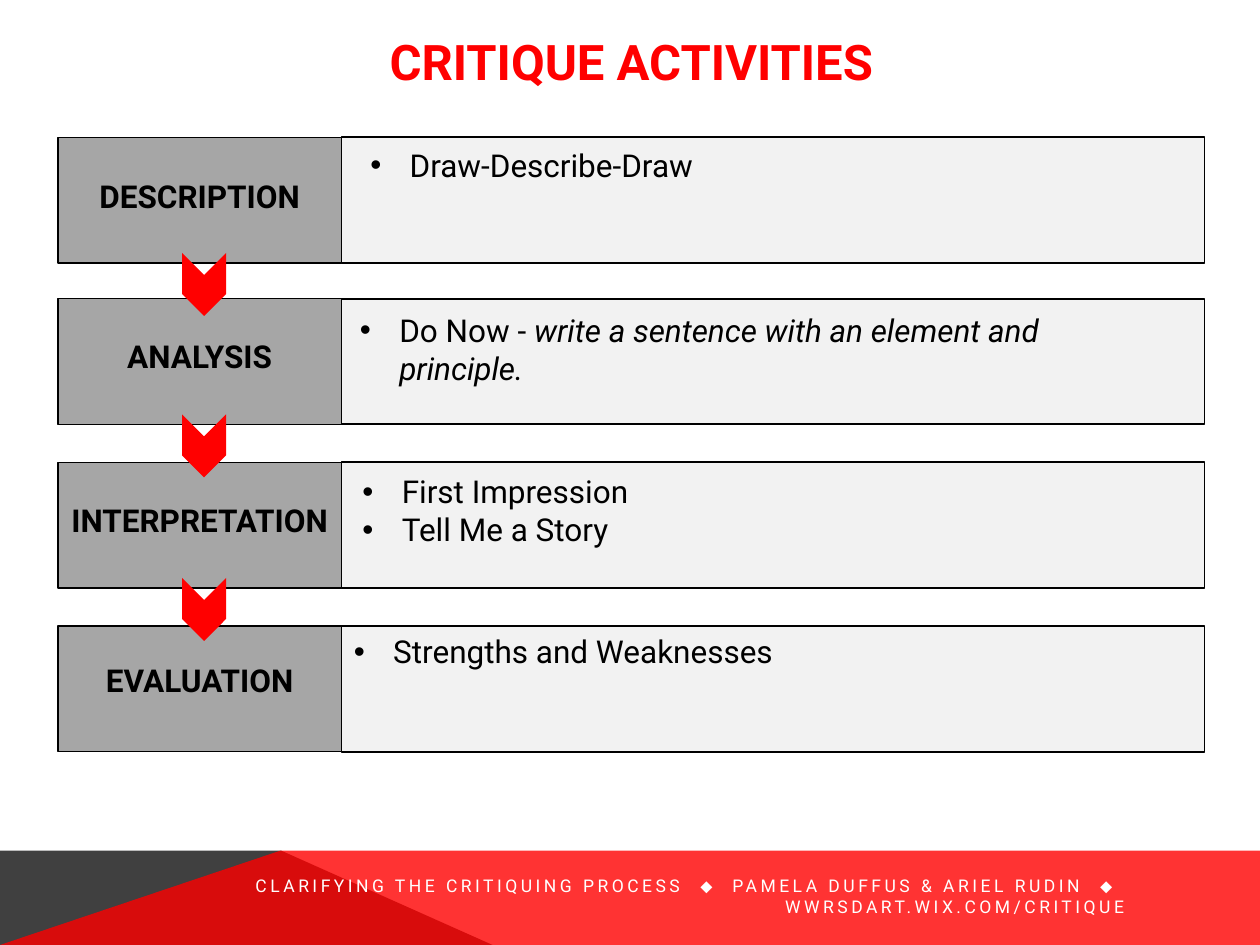
from dataclasses import dataclass
from typing import Tuple

from lxml.etree import SubElement
from pptx import Presentation
from pptx.dml.color import RGBColor
from pptx.enum.shapes import MSO_SHAPE as SHAPE
from pptx.enum.text import MSO_ANCHOR as ANCHOR, MSO_AUTO_SIZE as AUTO, PP_ALIGN as ALIGN
from pptx.oxml.ns import qn
from pptx.util import Pt

RED = RGBColor(0xFF, 0x00, 0x00)
BLACK = RGBColor(0x00, 0x00, 0x00)
WHITE = RGBColor(0xFF, 0xFF, 0xFF)
CHARCOAL = RGBColor(0x40, 0x40, 0x40)
GREY = RGBColor(0xA6, 0xA6, 0xA6)
PALE = RGBColor(0xF2, 0xF2, 0xF2)

PAGE_W, PAGE_H = 720, 540
FOOTER_TOP, FOOTER_PEAK = 486, 160.5
LABEL_X, LABEL_W = 33.1, 162
PANEL_X, PANEL_W = 195.1, 493.2
ROW_H = 71.8
CHEVRON_W, CHEVRON_H = 36, 25.2
INDENT = 22.5


@dataclass
class Run:
    text: str
    italic: bool = False
    font: str = "Roboto"
    spacing: float = 0


@dataclass
class Step:
    label: str
    top: float
    label_top: float
    box: Tuple[float, float, float, float]  # left, top, width, height
    bullets: Tuple[Tuple[Run, ...], ...]


STEPS = [
    Step("DESCRIPTION", 78.5, 97.7, (204.5, 79.9, 342, 29),
         ((Run("Draw-Describe-Draw"),),)),
    Step("ANALYSIS", 170.7, 189.1, (198.6, 174.1, 470, 73),
         ((Run("Do Now - "),
           Run("write a sentence with an element and principle.", italic=True)),)),
    Step("INTERPRETATION", 264.2, 282.8, (200, 266.4, 419, 51),
         ((Run("First Impression"),), (Run("Tell Me a Story"),))),
    Step("EVALUATION", 357.8, 374.4, (195.1, 357.8, 287, 51),
         ((Run("Strengths and Weaknesses"),),)),
]

# The wide tracking on each diamond sets the gap around it
FOOTER = (
    Run("CLARIFYING THE CRITIQUING PROCESS", spacing=2),
    Run(" ⬥", font="Arial", spacing=6.8),
    Run(" PAMELA DUFFUS & ARIEL RUDIN", spacing=2),
    Run(" ⬥", font="Arial", spacing=6.8),
    Run(" WWRSDART.WIX.COM/CRITIQUE", spacing=2),
)


def add_bullet(p) -> None:
    pPr = p._p.get_or_add_pPr()
    pPr.set("marL", str(Pt(INDENT)))
    pPr.set("indent", str(-Pt(INDENT)))
    SubElement(pPr, qn("a:buFont")).set("typeface", "Arial")
    SubElement(pPr, qn("a:buChar")).set("char", "•")


def write(tf, paragraphs, *, size=18, color=BLACK, bold=False,
          align=ALIGN.LEFT, anchor=ANCHOR.TOP, bullet=False) -> None:
    tf.word_wrap = True
    tf.vertical_anchor = anchor
    for i, runs in enumerate(paragraphs):
        p = tf.add_paragraph() if i else tf.paragraphs[0]
        p.alignment = align
        if bullet:
            add_bullet(p)
        for run in runs:
            r = p.add_run()
            r.text = run.text
            r.font.name = run.font
            r.font.size = Pt(size)
            r.font.bold = bold
            r.font.italic = run.italic
            r.font.color.rgb = color
            if run.spacing:
                r._r.get_or_add_rPr().set("spc", str(round(run.spacing * 100)))


def add_text(s, left: float, top: float, width: float, height: float,
             paragraphs, **fmt) -> None:
    sp = s.shapes.add_textbox(Pt(left), Pt(top), Pt(width), Pt(height))
    write(sp.text_frame, paragraphs, **fmt)
    sp.text_frame.auto_size = AUTO.SHAPE_TO_FIT_TEXT


def paint(sp, fill: RGBColor, line: float = 0) -> None:
    sp.shadow.inherit = False
    sp.fill.solid()
    sp.fill.fore_color.rgb = fill
    if line:
        sp.line.color.rgb = BLACK
        sp.line.width = Pt(line)
    else:
        sp.line.fill.background()


def add_block(s, kind, left: float, top: float, width: float, height: float,
              fill: RGBColor, line: float = 0):
    sp = s.shapes.add_shape(kind, Pt(left), Pt(top), Pt(width), Pt(height))
    paint(sp, fill, line)
    return sp


def add_polygon(s, points, fill: RGBColor):
    start, *rest = [(Pt(x), Pt(y)) for x, y in points]
    builder = s.shapes.build_freeform(*start)
    builder.add_line_segments(rest, close=True)
    sp = builder.convert_to_shape()
    paint(sp, fill)
    return sp


def add_footer_band(s) -> None:
    add_polygon(s, [(0, PAGE_H), (0, FOOTER_TOP), (FOOTER_PEAK, FOOTER_TOP),
                    (281.5, PAGE_H)], CHARCOAL)
    sp = add_polygon(s, [(0, PAGE_H), (FOOTER_PEAK, FOOTER_TOP),
                         (PAGE_W, FOOTER_TOP), (PAGE_W, PAGE_H)], RED)
    clr = sp._element.spPr.find(qn("a:solidFill"))[0]
    SubElement(clr, qn("a:alpha")).set("val", "80000")


def add_step(s, step: Step) -> None:
    add_block(s, SHAPE.RECTANGLE, PANEL_X, step.top, PANEL_W, ROW_H, PALE, 1)
    add_block(s, SHAPE.RECTANGLE, LABEL_X, step.top, LABEL_W, ROW_H, GREY, 0.75)
    add_text(s, 27.4, step.label_top, 173.4, 29, [[Run(step.label)]],
             bold=True, align=ALIGN.CENTER)
    add_text(s, *step.box, step.bullets, bullet=True)


def add_chevron(s, step: Step) -> None:
    sp = add_block(s, SHAPE.CHEVRON, 98.6, step.top + 71.5,
                   CHEVRON_W, CHEVRON_H, RED)
    sp.rotation = 90


def main() -> None:
    prs = Presentation()
    prs.slide_width, prs.slide_height = Pt(PAGE_W), Pt(PAGE_H)
    s = prs.slides.add_slide(prs.slide_layouts[5])

    # Title
    title = s.shapes.title
    title.left, title.top = Pt(64.8), Pt(13)
    title.width, title.height = Pt(591.8), Pt(43.2)
    write(title.text_frame, [[Run("CRITIQUE ACTIVITIES")]], size=28, color=RED,
          bold=True, align=ALIGN.CENTER, anchor=ANCHOR.MIDDLE)

    # Footer
    add_footer_band(s)
    add_text(s, 79.9, 501.1, 569.5, 21.6, [FOOTER], size=10, color=WHITE,
             align=ALIGN.RIGHT, anchor=ANCHOR.MIDDLE)

    # Steps, then the chevrons that link them
    for step in STEPS:
        add_step(s, step)
    for step in STEPS[:-1]:
        add_chevron(s, step)

    prs.save("out.pptx")


if __name__ == "__main__":
    main()
